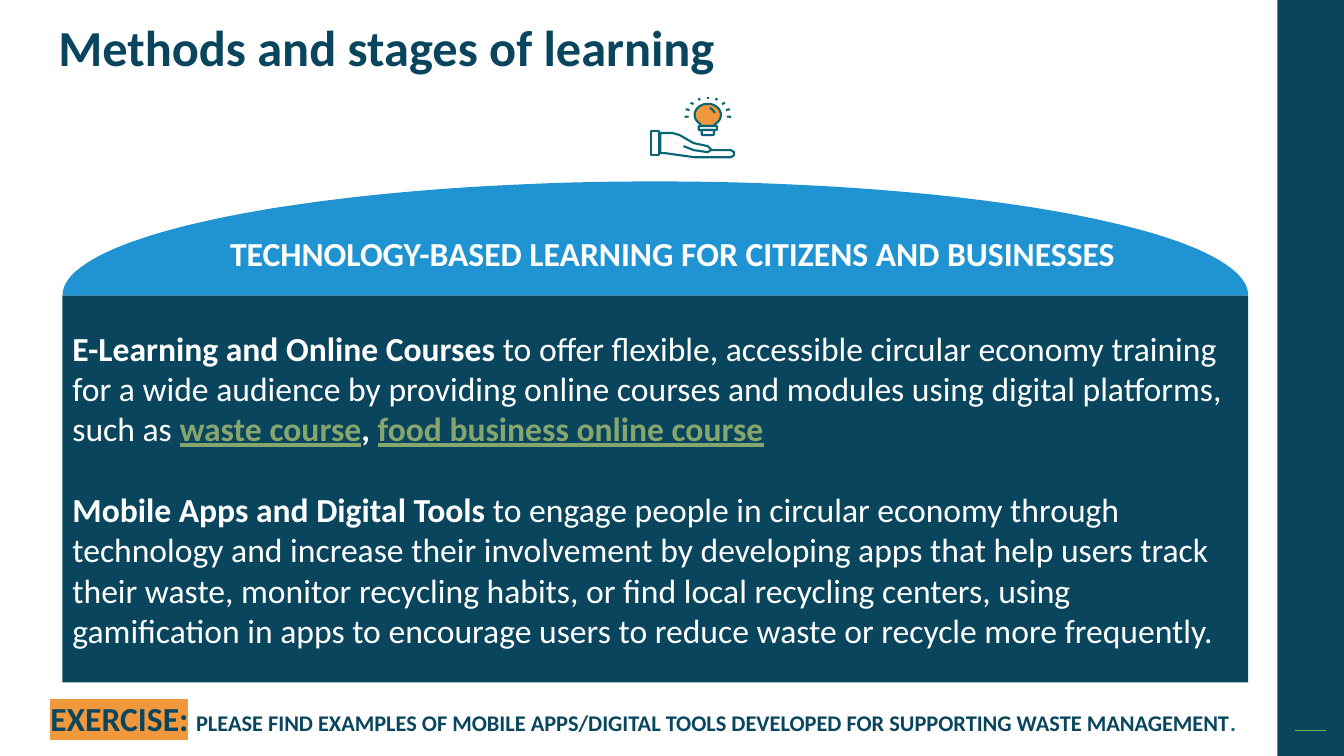
from math import cos, sin, radians

from lxml import etree
from pptx import Presentation
from pptx.dml.color import RGBColor
from pptx.enum.shapes import MSO_CONNECTOR, MSO_SHAPE
from pptx.enum.text import MSO_ANCHOR as ANCHOR, PP_ALIGN as ALIGN
from pptx.oxml.ns import qn
from pptx.util import Inches, Pt

NAVY = RGBColor(0x09, 0x46, 0x5E)
BLUE = RGBColor(0x20, 0x94, 0xD2)
TEAL = RGBColor(0x08, 0x65, 0x75)
DARK_TEAL = RGBColor(0x08, 0x6D, 0x6E)
ORANGE = RGBColor(0xF1, 0x98, 0x3D)
GREEN = RGBColor(0x60, 0xBA, 0x47)
SAGE = RGBColor(0x87, 0xA6, 0x6E)
WHITE = RGBColor(0xFF, 0xFF, 0xFF)


def arc(cx, cy, rx, ry, start, end, steps):
    """Return points along an elliptical arc, angles in degrees clockwise."""
    angles = [radians(start + (end - start) * i / steps) for i in range(steps + 1)]
    return [(cx + rx * cos(a), cy + ry * sin(a)) for a in angles]


class SlideBuilder:
    """Holds the style and the current slide."""

    font = "Calibri"
    stroke = 1.5

    def __init__(self, slide):
        """Keep the slide's shape collection."""
        self.shapes = slide.shapes

    def paint(self, sp, fill, line):
        """Set fill and line and drop the shadow."""
        sp.shadow.inherit = False
        if fill is None:
            sp.fill.background()
        else:
            sp.fill.solid()
            sp.fill.fore_color.rgb = fill
        if line is None:
            sp.line.fill.background()
        else:
            sp.line.color.rgb = line
            sp.line.width = Pt(self.stroke)
        return sp

    def box(self, x, y, w, h, fill=None, line=None, kind=MSO_SHAPE.RECTANGLE):
        """Add a preset shape."""
        sp = self.shapes.add_shape(kind, Inches(x), Inches(y), Inches(w), Inches(h))
        return self.paint(sp, fill, line)

    def outline(self, points, fill=None, line=None, close=True):
        """Add a freeform through points given in inches."""
        pts = [(x * 1000, y * 1000) for x, y in points]
        fb = self.shapes.build_freeform(*pts[0], scale=Inches(1) / 1000)
        fb.add_line_segments(pts[1:], close=close)
        return self.paint(fb.convert_to_shape(), fill, line)

    def line(self, start, end, color, width):
        """Add a straight line."""
        ends = [Inches(v) for v in (*start, *end)]
        cn = self.shapes.add_connector(MSO_CONNECTOR.STRAIGHT, *ends)
        cn.line.color.rgb = color
        cn.line.width = Pt(width)
        etree.SubElement(cn._element.spPr, qn("a:effectLst"))

    def text(self, x, y, w, h, paragraphs, align=ALIGN.LEFT, anchor=ANCHOR.TOP,
             gap=0, spacing=1.0):
        """Add a text box from paragraphs of runs."""
        tf = self.shapes.add_textbox(Inches(x), Inches(y), Inches(w), Inches(h)).text_frame
        tf.word_wrap = True
        tf.vertical_anchor = anchor
        for i, runs in enumerate(paragraphs):
            p = tf.add_paragraph() if i else tf.paragraphs[0]
            p.alignment = align
            p.line_spacing = spacing
            if i:
                p.space_before = Pt(gap)
            for run in runs:
                self.run(p, *run)

    def run(self, p, text, size, color, bold=True, underline=False, highlight=None):
        """Add one run with its own style."""
        r = p.add_run()
        r.text = text
        f = r.font
        f.name, f.size, f.bold, f.underline = self.font, Pt(size), bold, underline
        f.color.rgb = color
        if highlight is not None:
            mark = etree.Element(qn("a:highlight"))
            etree.SubElement(mark, qn("a:srgbClr"), val=str(highlight))
            r._r.rPr.find(qn("a:solidFill")).addnext(mark)

    def idea_icon(self):
        """Draw a light bulb above an open hand."""
        cx, cy = 7.02, 1.14
        bulb = arc(cx, cy, 0.13, 0.11, 125, 415, 32)
        self.outline(bulb + [(7.08, 1.25), (6.95, 1.25)], ORANGE, TEAL)
        self.outline(arc(cx, cy, 0.07, 0.07, -75, -15, 6), line=TEAL, close=False)
        for x, y, w, h in [(6.93, 1.25, 0.18, 0.04), (6.96, 1.29, 0.12, 0.05)]:
            self.box(x, y, w, h, WHITE, TEAL, MSO_SHAPE.ROUNDED_RECTANGLE)
        inner = arc(cx, cy, 0.19, 0.16, -186, 6, 8)
        outer = arc(cx, cy, 0.23, 0.18, -186, 6, 8)
        for start, end in zip(inner, outer):
            self.line(start, end, TEAL, self.stroke)
        self.box(6.46, 1.3, 0.08, 0.24, line=TEAL)
        hand = [(6.55, 1.32), (6.67, 1.32), (6.74, 1.34), (6.88, 1.42), (7.02, 1.45),
                (7.06, 1.49), (7.25, 1.49), (7.28, 1.51), (7.28, 1.54), (7.25, 1.56),
                (6.89, 1.56), (6.6, 1.52), (6.55, 1.52)]
        self.outline(hand, line=TEAL)
        thumb = [(6.78, 1.45), (6.88, 1.49), (7.02, 1.51), (7.05, 1.49)]
        self.outline(thumb, line=TEAL, close=False)


def main():
    """Build the slide and save it."""
    prs = Presentation()
    prs.slide_width, prs.slide_height = Inches(13.33), Inches(7.5)
    s = SlideBuilder(prs.slides.add_slide(prs.slide_layouts[6]))

    s.box(12.67, 0, 0.66, 7.5, NAVY)
    s.line((12.84, 7.25), (13.15, 7.25), GREEN, 1)
    s.text(0.48, 0.18, 8.15, 0.55,
           [[("Methods and stages of learning", 36, NAVY)]], spacing=0.9)

    s.box(0.62, 2.93, 11.76, 3.84, NAVY)
    s.outline(arc(6.5, 2.93, 5.88, 1.13, 180, 360, 90), BLUE)
    s.idea_icon()
    s.text(2.08, 2.26, 9.18, 0.5,
           [[("TECHNOLOGY-BASED LEARNING FOR CITIZENS AND BUSINESSES", 24, WHITE)]],
           align=ALIGN.CENTER)

    s.text(0.62, 3.2, 11.66, 3.33, [
        [("E-Learning and Online Courses ", 24, WHITE),
         ("to offer flexible, accessible circular economy training for a wide audience "
          "by providing online courses and modules using digital platforms, such as ",
          24, WHITE, False),
         ("waste course", 24, SAGE, True, True),
         (", ", 24, WHITE),
         ("food business online course", 24, SAGE, True, True)],
        [("Mobile Apps and Digital Tools", 24, WHITE),
         (" to engage people in circular economy through technology and increase their "
          "involvement by developing apps that help users track their waste, monitor "
          "recycling habits, or find local recycling centers, using gamification in apps "
          "to encourage users to reduce waste or recycle more frequently.",
          24, WHITE, False)],
    ], gap=29)

    s.text(0.4, 6.6, 12.32, 0.77, [
        [("EXERCISE:", 24, NAVY, True, False, ORANGE),
         (" ", 24, NAVY),
         ("PLEASE FIND EXAMPLES OF MOBILE APPS/DIGITAL TOOLS DEVELOPED FOR SUPPORTING "
          "WASTE MANAGEMENT", 16, NAVY),
         (".", 16, DARK_TEAL)],
    ], anchor=ANCHOR.BOTTOM)

    prs.save("out.pptx")


if __name__ == "__main__":
    main()
